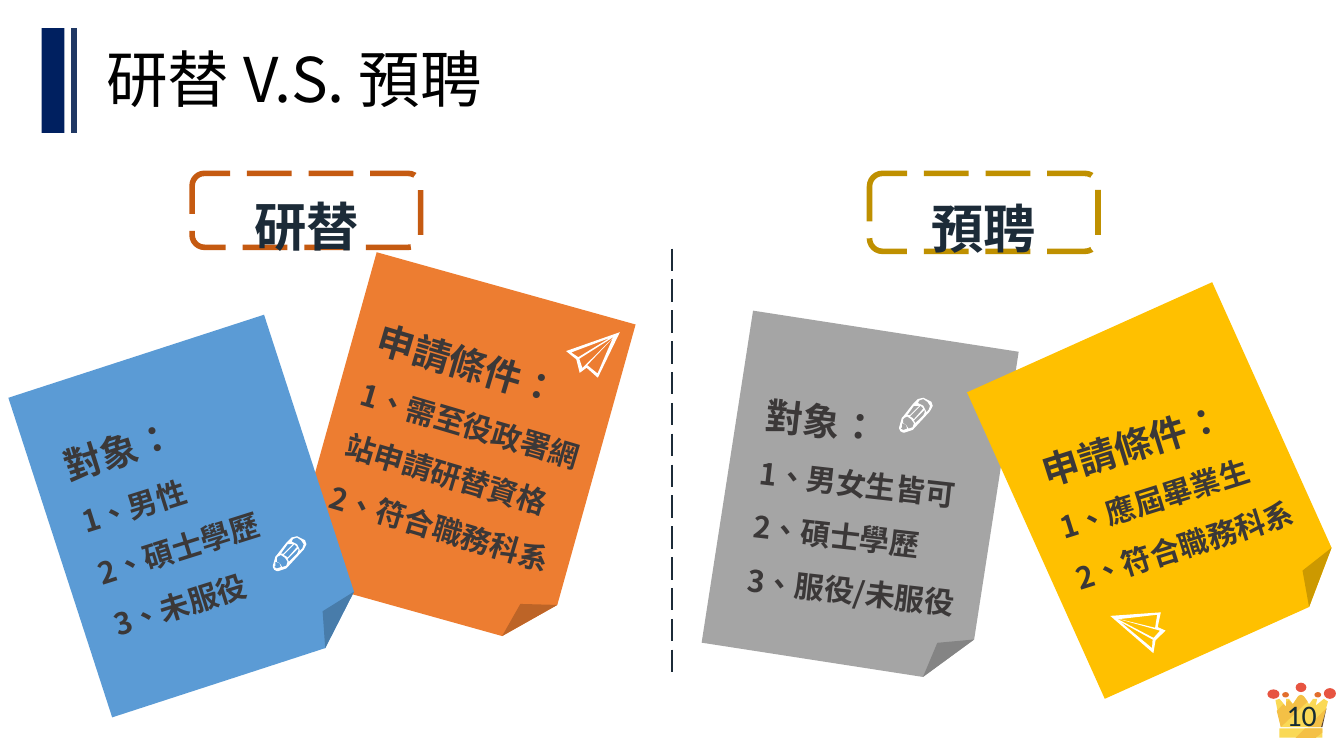
from dataclasses import dataclass

from lxml import etree
from pptx import Presentation
from pptx.dml.color import RGBColor
from pptx.enum.dml import MSO_LINE
from pptx.enum.lang import MSO_LANGUAGE_ID
from pptx.enum.shapes import MSO_CONNECTOR, MSO_SHAPE
from pptx.enum.text import MSO_ANCHOR, MSO_AUTO_SIZE, PP_ALIGN
from pptx.oxml.ns import qn
from pptx.util import Inches, Pt

RECT, OVAL = MSO_SHAPE.RECTANGLE, MSO_SHAPE.OVAL
ROUNDED, FOLDED = MSO_SHAPE.ROUNDED_RECTANGLE, MSO_SHAPE.FOLDED_CORNER
STRAIGHT, LONG_DASH = MSO_CONNECTOR.STRAIGHT, MSO_LINE.LONG_DASH
MIDDLE, TOP = MSO_ANCHOR.MIDDLE, MSO_ANCHOR.TOP
LEFT, CENTER = PP_ALIGN.LEFT, PP_ALIGN.CENTER
GROW, FIXED = MSO_AUTO_SIZE.SHAPE_TO_FIT_TEXT, MSO_AUTO_SIZE.NONE
CHINESE = MSO_LANGUAGE_ID.TRADITIONAL_CHINESE


@dataclass(frozen=True)
class Theme:
    cjk: str = "Noto Sans CJK SC"
    latin: str = "Calibri"
    title_size: int = 33
    tag_size: int = 28
    heading_size: int = 20
    body_size: int = 16
    black: str = "000000"
    white: str = "FFFFFF"
    ink: str = "1C2B38"
    note_ink: str = "3B3838"
    number_ink: str = "152C34"
    navy: str = "002060"
    navy_light: str = "203864"
    blue: str = "5B9BD5"
    orange: str = "ED7D31"
    grey: str = "A5A5A5"
    yellow: str = "FFC000"
    orange_dark: str = "C55A11"
    yellow_dark: str = "BF9000"
    gold: str = "FAD956"
    gold_shade: str = "F4C046"
    brown: str = "62472F"
    jewel_red: str = "E75441"
    jewel_orange: str = "E26E2D"


theme = Theme()

PENCIL = [
    [(22, 2), (18, 0), (14, 1), (10, 5), (3, 14), (2, 15), (0, 22), (0, 23), (1, 25), (3, 26),
     (4, 26), (10, 24), (11, 23), (23, 10), (25, 6), (24, 3)],
    [(12, 19), (11, 17), (19, 9), (19, 11), (18, 13)],
    [(11, 16), (10, 15), (8, 14), (16, 6), (17, 7), (18, 8)],
    [(8, 13), (6, 13), (11, 6), (13, 5.5), (15, 6)],
    [(3, 24), (1, 23), (2, 22), (2, 19), (5, 20.5), (6, 23)],
    [(7, 23), (5, 20), (3, 19), (3, 16), (4, 15), (6, 14.3), (9, 16), (11, 19), (10, 22)],
    [(22, 9), (20, 11), (20, 10), (18, 6), (14, 4), (15, 2), (18, 1), (21, 3), (23, 6)],
]
PLANE = [
    [(35, 0), (0, 23.5), (9, 28.5), (14.5, 37), (17.5, 31.5), (28.5, 37)],
    [(4, 23.7), (29, 5.5), (10, 26)],
    [(11, 27), (31.7, 3.8), (14.7, 33.2)],
    [(27.4, 34), (18, 29.8), (31.2, 6)],
]
CROWN = [
    (theme.gold, [(85, 20), (79, 25), (80, 20), (77, 20), (74, 24), (70, 18), (68, 17), (66, 18),
                  (62, 24), (59, 20), (57, 20), (57, 26), (52, 20), (49, 21), (53, 41), (83, 41),
                  (88, 22)]),
    (theme.gold_shade, [(68, 17), (66, 18), (62, 24), (59, 21), (57, 23), (57, 26), (55, 24),
                        (50, 29), (53, 41), (73, 22), (70, 18)]),
    (theme.gold_shade, [(84, 42), (71, 42), (64, 49), (79, 49), (84, 45)]),
    (theme.gold_shade, [(87, 27), (73, 41), (83, 41)]),
    (theme.brown, [(87, 27), (83, 41), (84, 41)]),
]

prs = Presentation()
prs.slide_width = Inches(10)
prs.slide_height = Inches(10 * 9 / 16)
slide = prs.slides.add_slide(prs.slide_layouts[5])
shapes = slide.shapes


def write(frame, lines, sizes, color, font=theme.cjk, bold=False, align=LEFT,
          anchor=MIDDLE, spacing=1.0, fit=FIXED):
    frame.word_wrap = True
    frame.auto_size = fit
    frame.vertical_anchor = anchor
    for index, (line, size) in enumerate(zip(lines, sizes)):
        paragraph = frame.add_paragraph() if index else frame.paragraphs[0]
        paragraph.alignment = align
        paragraph.line_spacing = spacing
        run = paragraph.add_run()
        run.text = line
        run.font.language_id = CHINESE
        run.font.size = Pt(size)
        run.font.bold = bold
        run.font.color.rgb = RGBColor.from_string(color)
        run.font.name = font
        etree.SubElement(run.font._element, qn("a:ea")).set("typeface", font)


def draw_outline(contours, left, top, color, rotation=0):
    start, *rest = contours[0]
    builder = shapes.build_freeform(*start, scale=Inches(0.01))
    builder.add_line_segments(rest, close=True)
    for start, *rest in contours[1:]:
        builder.move_to(*start)
        builder.add_line_segments(rest, close=True)
    outline = builder.convert_to_shape(Inches(left), Inches(top))
    outline.shadow.inherit = False
    outline.fill.solid()
    outline.fill.fore_color.rgb = RGBColor.from_string(color)
    outline.line.fill.background()
    outline.rotation = rotation


title = shapes.title
title.left, title.top, title.width, title.height = map(Inches, (0.69, 0.22, 8.62, 0.79))
write(title.text_frame, ["研替 V.S. 預聘"], [theme.title_size], theme.black, spacing=0.9)

for kind, box, color in [
    (RECT, (0.31, 0.21, 0.17, 0.78), theme.navy),
    (OVAL, (9.54, 5.15, 0.05, 0.04), theme.jewel_orange),
    (OVAL, (9.64, 5.08, 0.08, 0.07), theme.jewel_red),
    (OVAL, (9.78, 5.15, 0.05, 0.04), theme.jewel_orange),
    (RECT, (9.52, 5.42, 0.32, 0.07), theme.gold),
    (OVAL, (9.85, 5.12, 0.09, 0.08), theme.jewel_red),
    (OVAL, (9.43, 5.13, 0.09, 0.07), theme.jewel_red),
]:
    ornament = shapes.add_shape(kind, *map(Inches, box))
    ornament.shadow.inherit = False
    ornament.fill.solid()
    ornament.fill.fore_color.rgb = RGBColor.from_string(color)
    ornament.line.fill.background()

for color, contour in CROWN:
    draw_outline([contour], 9, 5, color)

page_number = shapes.add_textbox(*map(Inches, (8.52, 5.17, 2.33, 0.3)))
write(page_number.text_frame, ["10"], [theme.body_size], theme.number_ink,
      font=theme.latin, align=CENTER)

for x, top, bottom, color, width, dash in [
    (0.55, 0.21, 0.99, theme.navy_light, 3, None),
    (5, 1.85, 5.02, theme.ink, 1.5, LONG_DASH),
]:
    rule = shapes.add_connector(STRAIGHT, Inches(x), Inches(top), Inches(x), Inches(bottom))
    rule.line.color.rgb = RGBColor.from_string(color)
    rule.line.width = Pt(width)
    rule.line.dash_style = dash
    etree.SubElement(rule._element.spPr, qn("a:effectLst"))

for label, left, height, color in [
    ("研替", 1.43, 0.55, theme.orange_dark),
    ("預聘", 6.47, 0.58, theme.yellow_dark),
]:
    tag = shapes.add_shape(ROUNDED, Inches(left), Inches(1.29), Inches(1.7), Inches(height))
    tag.shadow.inherit = False
    tag.fill.background()
    tag.line.color.rgb = RGBColor.from_string(color)
    tag.line.width = Pt(3)
    tag.line.dash_style = LONG_DASH
    write(tag.text_frame, [label], [theme.tag_size], theme.ink, bold=True,
          align=CENTER, spacing=1.5)

for color, left, top, tilt, text_box, text_tilt, lines in [
    (theme.grey, 5.4, 2.45, 8.8, (5.54, 2.79, 1.78, 1.82), 6.5,
     ["對象：", "1、男女生皆可", "2、碩士學歷", "3、服役/未服役"]),
    (theme.yellow, 7.62, 2.4, 335.8, (7.72, 2.85, 1.98, 1.41), 342.4,
     ["申請條件：", "1、應屆畢業生", "2、符合職務科系"]),
    (theme.orange, 2.43, 2.1, 15.6, (2.53, 2.36, 1.98, 1.82), 16.6,
     ["申請條件：", "1、需至役政署網站申請研替資格", "2、符合職務科系"]),
    (theme.blue, 0.4, 2.59, 342, (0.51, 2.83, 1.78, 1.82), 342.5,
     ["對象：", "1、男性", "2、碩士學歷", "3、未服役"]),
]:
    note = shapes.add_shape(FOLDED, Inches(left), Inches(top), Inches(2), Inches(2.5))
    note.shadow.inherit = False
    note.fill.solid()
    note.fill.fore_color.rgb = RGBColor.from_string(color)
    note.line.fill.background()
    note.rotation = tilt
    content = shapes.add_textbox(*map(Inches, text_box))
    content.rotation = text_tilt
    sizes = [theme.heading_size] + [theme.body_size] * (len(lines) - 1)
    write(content.text_frame, lines, sizes, theme.note_ink, bold=True,
          anchor=TOP, spacing=1.5, fit=GROW)

for icon, left, top, rotation in [
    (PENCIL, 2.03, 3.99, 0),
    (PENCIL, 6.69, 2.96, 0),
    (PLANE, 4.22, 2.42, 15.1),
    (PLANE, 8.31, 4.52, 255.3),
]:
    draw_outline(icon, left, top, theme.white, rotation)

prs.save("out.pptx")
